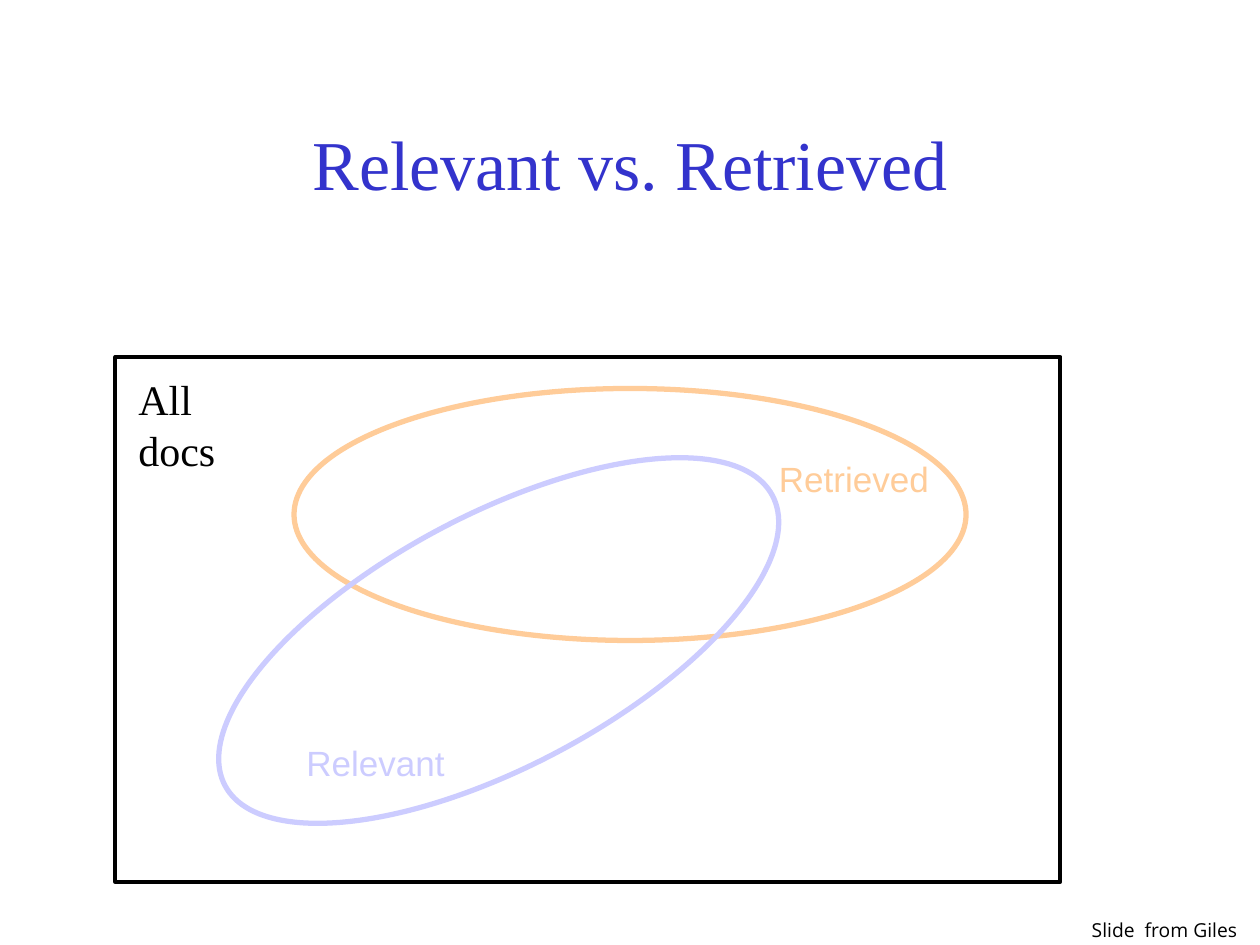
from pptx import Presentation
from pptx import util as u
from pptx.dml.color import RGBColor
from pptx.enum import shapes, text

BLACK = RGBColor(0x00, 0x00, 0x00)
BLUE = RGBColor(0x33, 0x33, 0xCC)
ORANGE = RGBColor(0xFF, 0xCC, 0x99)
LILAC = RGBColor(0xCC, 0xCC, 0xFF)

SERIF = "Times New Roman"
SANS = "Arial"
CREDIT_FONT = "Open Sans"

COLUMNS, ROWS = 120, 90
CELL = u.Inches(10) // COLUMNS


def cells(*counts):
    """Turn counts of grid cells into lengths."""
    return [u.Emu(round(count * CELL)) for count in counts]


def format_text(frame, content, font, size, color):
    frame.text = content
    for span in frame.paragraphs[0].runs:
        span.font.name = font
        span.font.size = u.Pt(size)
        span.font.color.rgb = color


def set_title(page, content):
    title = page.shapes.title
    title.left, title.top, title.width, title.height = cells(9, 8, 102, 15)
    frame = title.text_frame
    format_text(frame, content, SERIF, 40, BLUE)
    frame.vertical_anchor = text.MSO_ANCHOR.MIDDLE
    frame.paragraphs[0].alignment = text.PP_ALIGN.CENTER


def add_outline(page, kind, place, color, weight, tilt=0):
    """Add an unfilled shape; place is column, row, columns wide, rows high."""
    outline = page.shapes.add_shape(kind, *cells(*place))
    outline.shadow.inherit = False
    outline.fill.background()
    outline.line.color.rgb = color
    outline.line.width = u.Pt(weight)
    outline.rotation = tilt


def add_label(page, content, place, font, size, color):
    box = page.shapes.add_textbox(*cells(*place))
    frame = box.text_frame
    frame.word_wrap = False
    frame.auto_size = text.MSO_AUTO_SIZE.SHAPE_TO_FIT_TEXT
    format_text(frame, content, font, size, color)


def main():
    deck = Presentation()
    deck.slide_width, deck.slide_height = cells(COLUMNS, ROWS)
    page = deck.slides.add_slide(deck.slide_layouts[5])
    set_title(page, "Relevant vs. Retrieved")

    oval = shapes.MSO_SHAPE.OVAL
    add_outline(page, oval, (28, 37, 64, 24), ORANGE, 3)
    add_outline(page, oval, (18, 49, 59, 24), LILAC, 3, tilt=332.1)
    add_label(page, "Relevant", (28, 70, 15.6, 5.2), SANS, 20, LILAC)
    add_label(page, "Retrieved", (73, 43, 20.8, 5.2), SANS, 20, ORANGE)

    add_outline(page, shapes.MSO_SHAPE.RECTANGLE, (11, 34, 90, 50), BLACK, 2.25)
    add_label(page, "All docs", (12, 35, 15.8, 6), SERIF, 24, BLACK)
    add_label(page, "Slide  from Giles", (102.8, 86.9, 17, 3.5), CREDIT_FONT, 11, BLACK)

    deck.save("out.pptx")


if __name__ == "__main__":
    main()
